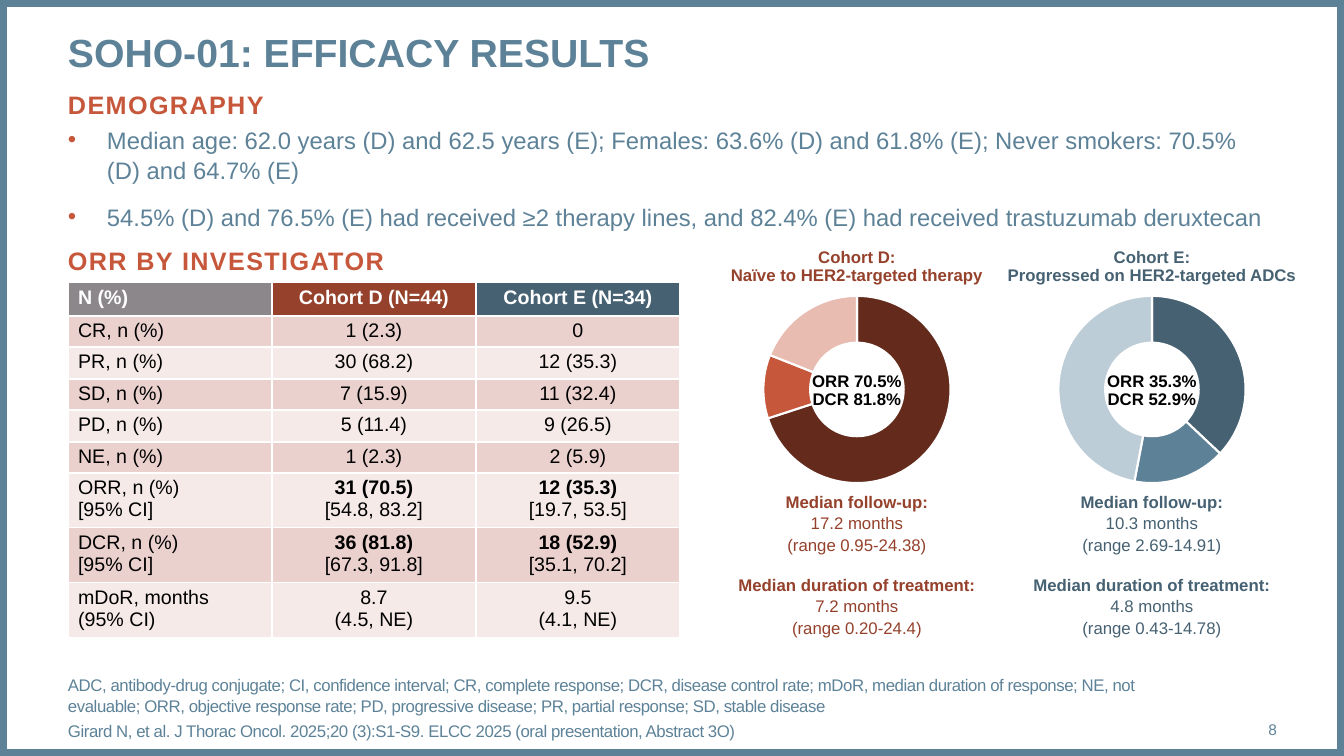
"""Build the SOHO-01 efficacy results slide."""
import pptx
import pptx.chart.data
import pptx.dml.color
import pptx.enum.chart
import pptx.enum.shapes
import pptx.enum.text
import pptx.oxml
import pptx.oxml.ns
import pptx.util

COLOURS = {
    "steel": "5D8298", "navy": "466172", "rust": "C6573B", "brick": "95412B",
    "maroon": "642B1D", "blush": "E8BCB1", "mist": "BDCDD7", "grey": "8B878B",
    "rose": "EAD1CE", "pale": "F5EAE8", "white": "FFFFFF", "black": "000000",
}
LEFT = pptx.enum.text.PP_ALIGN.LEFT
CENTER = pptx.enum.text.PP_ALIGN.CENTER
RIGHT = pptx.enum.text.PP_ALIGN.RIGHT
TOP = pptx.enum.text.MSO_ANCHOR.TOP
MIDDLE = pptx.enum.text.MSO_ANCHOR.MIDDLE
BOTTOM = pptx.enum.text.MSO_ANCHOR.BOTTOM

BULLETS = [
    "Median age: 62.0 years (D) and 62.5 years (E); Females: 63.6% (D) and 61.8% (E); "
    "Never smokers: 70.5% (D) and 64.7% (E)",
    "54.5% (D) and 76.5% (E) had received ≥2 therapy lines, and 82.4% (E) had received "
    "trastuzumab deruxtecan",
]
FOOTNOTES = [
    "ADC, antibody-drug conjugate; CI, confidence interval; CR, complete response; "
    "DCR, disease control rate; mDoR, median duration of response; NE, not evaluable; "
    "ORR, objective response rate; PD, progressive disease; PR, partial response; "
    "SD, stable disease",
    "Girard N, et al. J Thorac Oncol. 2025;20 (3):S1-S9. ELCC 2025 "
    "(oral presentation, Abstract 3O)",
]
RESPONSES = [
    ["N (%)", "Cohort D (N=44)", "Cohort E (N=34)"],
    ["CR, n (%)", "1 (2.3)", "0"],
    ["PR, n (%)", "30 (68.2)", "12 (35.3)"],
    ["SD, n (%)", "7 (15.9)", "11 (32.4)"],
    ["PD, n (%)", "5 (11.4)", "9 (26.5)"],
    ["NE, n (%)", "1 (2.3)", "2 (5.9)"],
    ["ORR, n (%)\n[95% CI]", "31 (70.5)\n[54.8, 83.2]", "12 (35.3)\n[19.7, 53.5]"],
    ["DCR, n (%)\n[95% CI]", "36 (81.8)\n[67.3, 91.8]", "18 (52.9)\n[35.1, 70.2]"],
    ["mDoR, months\n(95% CI)", "8.7\n(4.5, NE)", "9.5\n(4.1, NE)"],
]
COHORTS = [
    {"middle": 857, "colour": "brick",
     "title": ["Cohort D:", "Naïve to HER2-targeted therapy"],
     "values": [70, 11, 19], "slices": ["maroon", "rust", "blush"],
     "rates": ["ORR 70.5%", "DCR 81.8%"],
     "follow_up": ["17.2 months", "(range 0.95-24.38)"],
     "treatment": ["7.2 months", "(range 0.20-24.4)"]},
    {"middle": 1152, "colour": "navy",
     "title": ["Cohort E:", "Progressed on HER2-targeted ADCs"],
     "values": [37, 16, 47], "slices": ["navy", "steel", "mist"],
     "rates": ["ORR 35.3%", "DCR 52.9%"],
     "follow_up": ["10.3 months", "(range 2.69-14.91)"],
     "treatment": ["4.8 months", "(range 0.43-14.78)"]},
]


def px(length):
    """Turn pixels into EMU."""
    return pptx.util.Emu(round(length * 914400 / 100.8))


def rgb(name):
    """Look up a named colour."""
    return pptx.dml.color.RGBColor.from_string(COLOURS[name])


class SlideBuilder:
    """Hold the font and the current page, and draw each kind of element."""

    font = "Arial"

    def __init__(self, page):
        """Start on a page."""
        self.page = page

    def fill_text(self, frame, lines, size, colour, bold=(), align=LEFT, spacing=1.0,
                  before=0, tracking=0, bullet=False):
        """Fill a text frame; bold holds the indices of the bold lines."""
        for index, line in enumerate(lines):
            para = frame.paragraphs[0] if index == 0 else frame.add_paragraph()
            span = para.add_run()
            span.text = line
            if tracking:
                span._r.get_or_add_rPr().set("spc", str(tracking))
            para.alignment = align
            para.line_spacing = spacing
            para.space_before = pptx.util.Pt(before if index else 0)
            if bullet:
                self.add_bullet(para)
            para.font.name = self.font
            para.font.size = pptx.util.Pt(size)
            para.font.bold = index in bold
            para.font.color.rgb = rgb(colour)

    def add_bullet(self, para):
        """Give a paragraph a rust bullet and a hanging indent."""
        properties = para._p.get_or_add_pPr()
        properties.set("marL", str(px(39)))
        properties.set("indent", str(-px(39)))
        namespace = pptx.oxml.ns.nsdecls("a")
        for markup in (
            f'<a:buClr {namespace}><a:srgbClr val="{COLOURS["rust"]}"/></a:buClr>',
            f'<a:buFont {namespace} typeface="Arial"/>',
            f'<a:buChar {namespace} char="•"/>',
        ):
            properties.append(pptx.oxml.parse_xml(markup))

    def prepare(self, frame, anchor):
        """Make a text frame wrap without margins."""
        frame.word_wrap = True
        frame.auto_size = pptx.enum.text.MSO_AUTO_SIZE.NONE
        frame.vertical_anchor = anchor
        frame.margin_left = frame.margin_right = frame.margin_top = frame.margin_bottom = 0

    def text(self, at, lines, size, colour, anchor=TOP, **style):
        """Add a text box."""
        box = self.page.shapes.add_textbox(*map(px, at))
        self.prepare(box.text_frame, anchor)
        self.fill_text(box.text_frame, lines, size, colour, **style)
        return box

    def title(self, at, line):
        """Place and format the title placeholder."""
        box = self.page.shapes.title
        box.left, box.top, box.width, box.height = map(px, at)
        self.prepare(box.text_frame, TOP)
        self.fill_text(box.text_frame, [line], 28, "steel", bold=[0])

    def frame(self, at):
        """Outline the page."""
        border = self.page.shapes.add_shape(
            pptx.enum.shapes.MSO_SHAPE.RECTANGLE, *map(px, at))
        border.shadow.inherit = False
        border.fill.background()
        border.line.color.rgb = rgb("steel")
        border.line.width = pptx.util.Pt(10)

    def table(self, at, rows, heights):
        """Add the response table."""
        grid = self.page.shapes.add_table(len(rows), len(rows[0]), *map(px, at)).table
        for row, (texts, height) in enumerate(zip(rows, heights)):
            grid.rows[row].height = px(height)
            for column, content in enumerate(texts):
                cell = grid.cell(row, column)
                cell.margin_top = cell.margin_bottom = px(4 if row else 5)
                head = ("grey", "brick", "navy")[column]
                band = "rose" if row % 2 else "pale"
                cell.fill.solid()
                cell.fill.fore_color.rgb = rgb(band if row else head)
                strong = row == 0 or (row in (6, 7) and column > 0)
                self.fill_text(cell.text_frame, content.split("\n"), 14,
                               "black" if row else "white", bold=[0] if strong else (),
                               align=CENTER if column else LEFT)

    def doughnut(self, at, values, slices):
        """Add a doughnut chart with one colour per slice."""
        numbers = pptx.chart.data.CategoryChartData()
        numbers.categories = ["1", "2", "3"]
        numbers.add_series("Series 1", values)
        chart = self.page.shapes.add_chart(
            pptx.enum.chart.XL_CHART_TYPE.DOUGHNUT, *map(px, at), numbers).chart
        chart.has_legend = chart.has_title = False
        chart.font.name = "Calibri"
        chart.font.size = pptx.util.Pt(10)
        chart.font.color.rgb = rgb("black")
        plot = chart.plots[0]
        plot.vary_by_categories = True
        plot._element.find(pptx.oxml.ns.qn("c:holeSize")).set("val", "58")
        for index, colour in enumerate(slices):
            look = plot.series[0].points[index].format
            look.fill.solid()
            look.fill.fore_color.rgb = rgb(colour)
            look.line.color.rgb = rgb("white")
            look.line.width = pptx.util.Pt(1.5)


def main():
    """Build and save the deck."""
    deck = pptx.Presentation()
    deck.slide_width, deck.slide_height = px(1344), px(756)
    slide = SlideBuilder(deck.slides.add_slide(deck.slide_layouts[5]))
    slide.frame((0, 0, 1344, 756))
    slide.title((68, 28, 1209, 56), "SOHO-01: EFFICACY RESULTS")
    for top, heading in ((89, "DEMOGRAPHY"), (245, "ORR BY INVESTIGATOR")):
        slide.text((68, top, 400, 30), [heading], 18, "rust", bold=[0], tracking=100)
    slide.text((68, 124, 1209, 110), BULLETS, 17, "steel",
               spacing=1.05, before=12, bullet=True)
    heights = [34] + [31, 32, 31, 32, 31] + [55] * 3
    slide.table((68, 282, 612, sum(heights)), RESPONSES, heights)
    for cohort in COHORTS:
        middle, colour = cohort["middle"], cohort["colour"]
        slide.text((middle - 150, 249, 300, 36), cohort["title"], 12, colour,
                   bold=[0, 1], align=CENTER, spacing=0.9)
        slide.doughnut((middle - 161, 282, 322, 215), cohort["values"], cohort["slices"])
        slide.text((middle - 137, 373, 274, 36), cohort["rates"], 12, "black",
                   bold=[0, 1], align=CENTER, spacing=0.9)
        facts = (["Median follow-up:"] + cohort["follow_up"]
                 + ["Median duration of treatment:"] + cohort["treatment"])
        box = slide.text((middle - 137, 491, 274, 145), facts, 12, colour,
                         bold=[0, 3], align=CENTER, spacing=1.05)
        box.text_frame.paragraphs[3].space_before = pptx.util.Pt(14)
    slide.text((68, 681, 1122, 60), FOOTNOTES, 12, "steel", anchor=BOTTOM,
               spacing=1.05, before=3, tracking=-30)
    slide.text((1190, 709, 87, 40), ["8"], 11, "steel", anchor=MIDDLE, align=RIGHT)
    deck.save("out.pptx")


if __name__ == "__main__":
    main()
